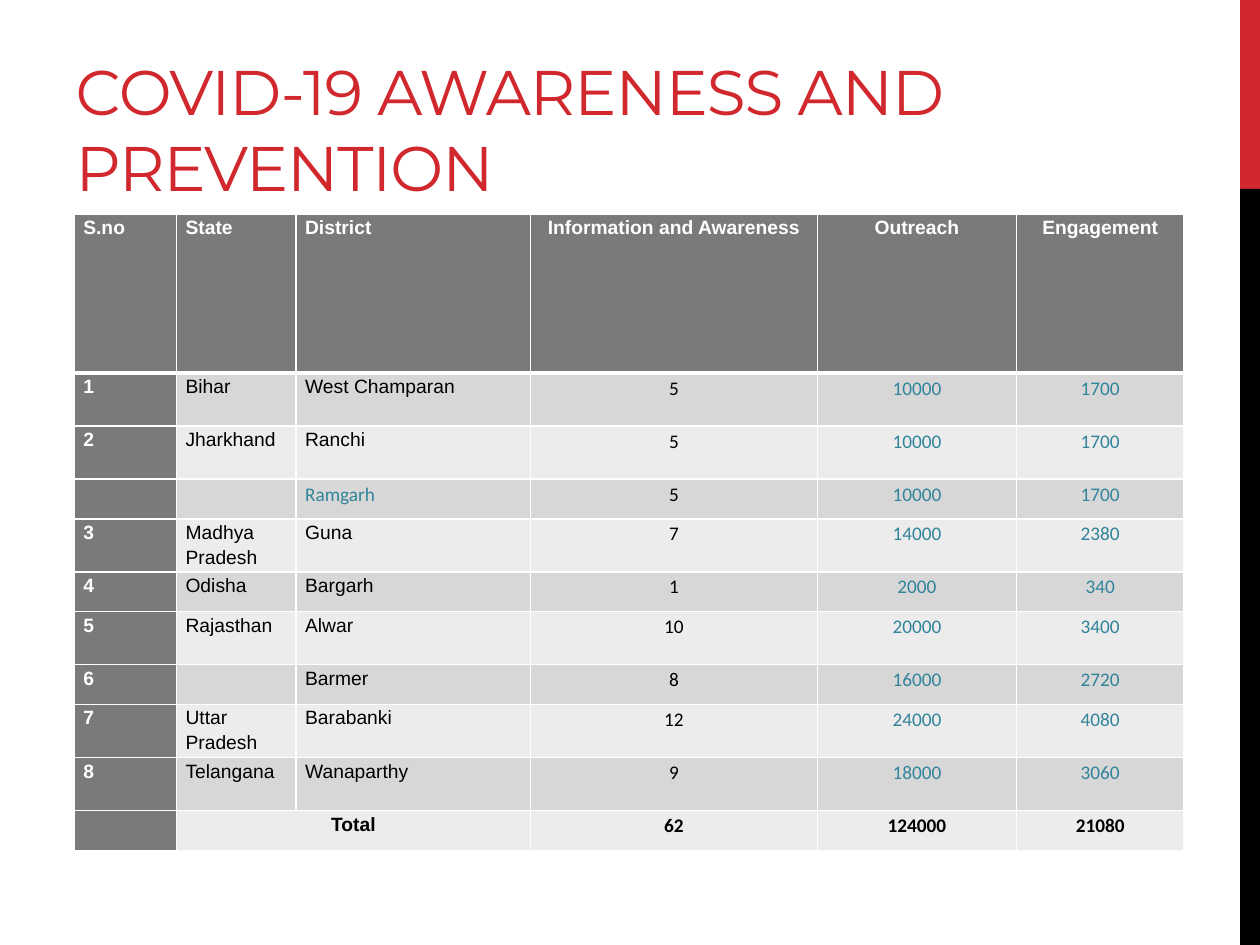
from dataclasses import dataclass, replace

from lxml.etree import SubElement
from pptx import Presentation
from pptx.dml.color import RGBColor
from pptx.enum.shapes import MSO_SHAPE
from pptx.enum.text import MSO_ANCHOR, MSO_AUTO_SIZE, PP_ALIGN
from pptx.oxml.ns import qn
from pptx.util import Cm, Pt

RED, BLACK, WHITE, TEAL = "D1282E", "000000", "FFFFFF", "31849B"
GREY, BAND_DARK, BAND_LIGHT = "7A7A7A", "D7D7D7", "ECECEC"


@dataclass(frozen=True)
class CellStyle:
    font: str
    color: str
    bold: bool = False
    centered: bool = False


@dataclass(frozen=True)
class Bar:
    top: float
    height: float
    color: str


HEADER = CellStyle("Arial", WHITE, bold=True)
PLACE = CellStyle("Arial", BLACK)
COUNT = CellStyle("Calibri", BLACK, centered=True)
REACH = CellStyle("Calibri", TEAL, centered=True)
COLUMN_STYLES = [HEADER, PLACE, PLACE, COUNT, REACH, REACH]
FIRST_CENTERED = 3

BARS = [Bar(0, 3.81, RED), Bar(3.81, 15.24, BLACK)]
COLUMN_WIDTHS = [2.06, 2.41, 4.72, 5.79, 4.01, 3.38]
HEADER_HEIGHT, TALL, SHORT = 3.2, 1.07, 0.8
ROW_HEIGHTS = [HEADER_HEIGHT, TALL, TALL, SHORT, TALL, SHORT,
               TALL, SHORT, TALL, TALL, SHORT]
ROWS = [
    ["S.no", "State", "District", "Information and Awareness", "Outreach", "Engagement"],
    ["1", "Bihar", "West Champaran", "5", "10000", "1700"],
    ["2", "Jharkhand", "Ranchi", "5", "10000", "1700"],
    ["", "", "Ramgarh", "5", "10000", "1700"],
    ["3", "Madhya Pradesh", "Guna", "7", "14000", "2380"],
    ["4", "Odisha", "Bargarh", "1", "2000", "340"],
    ["5", "Rajasthan", "Alwar", "10", "20000", "3400"],
    ["6", "", "Barmer", "8", "16000", "2720"],
    ["7", "Uttar Pradesh", "Barabanki", "12", "24000", "4080"],
    ["8", "Telangana", "Wanaparthy", "9", "18000", "3060"],
    ["", "Total", "", "62", "124000", "21080"],
]
TOTAL_ROW = len(ROWS) - 1


def rgb(color: str) -> RGBColor:
    return RGBColor.from_string(color)


def add_bar(slide, bar: Bar) -> None:
    sp = slide.shapes.add_shape(MSO_SHAPE.RECTANGLE, Cm(25), Cm(bar.top),
                                Cm(0.4), Cm(bar.height))
    sp.shadow.inherit = False
    sp.fill.solid()
    sp.fill.fore_color.rgb = rgb(bar.color)
    sp.line.fill.background()


def set_title(slide, text: str) -> None:
    sp = slide.shapes.title
    sp.left, sp.top, sp.width, sp.height = Cm(1.27), Cm(0.43), Cm(22.43), Cm(3.81)
    tf = sp.text_frame
    tf.text = text
    tf.word_wrap = True
    tf.auto_size = MSO_AUTO_SIZE.NONE
    tf.vertical_anchor = MSO_ANCHOR.BOTTOM
    p = tf.paragraphs[0]
    p.alignment = PP_ALIGN.LEFT
    r = p.runs[0]
    r.font.name, r.font.size = "Montserrat", Pt(36)
    r.font.color.rgb = rgb(RED)
    r._r.get_or_add_rPr().set("spc", "-60")


def style_for(row: int, col: int) -> CellStyle:
    if row == 0:
        return replace(HEADER, centered=col >= FIRST_CENTERED)
    if row == TOTAL_ROW and col > 0:
        return replace(COLUMN_STYLES[col], color=BLACK, bold=True, centered=True)
    if ROWS[row][col] == "Ramgarh":
        return replace(REACH, centered=False)
    return COLUMN_STYLES[col]


def fill_for(row: int, col: int) -> str:
    if row == 0 or col == 0:
        return GREY
    return BAND_DARK if row % 2 else BAND_LIGHT


def set_borders(cell, row: int) -> None:
    # Border lines come before the fill in the cell properties
    widths = {"lnL": 1, "lnR": 1, "lnT": 3 if row == 1 else 1, "lnB": 3 if row == 0 else 1}
    tc_pr = cell._tc.get_or_add_tcPr()
    for i, (side, width) in enumerate(widths.items()):
        ln = SubElement(tc_pr, qn(f"a:{side}"), w=str(Pt(width)))
        fill = SubElement(ln, qn("a:solidFill"))
        SubElement(fill, qn("a:srgbClr"), val=WHITE)
        tc_pr.insert(i, ln)


def fill_cell(cell, text: str, style: CellStyle, fill: str) -> None:
    cell.fill.solid()
    cell.fill.fore_color.rgb = rgb(fill)
    cell.margin_left = cell.margin_right = Cm(0.18)
    cell.margin_top = cell.margin_bottom = 0
    cell.vertical_anchor = MSO_ANCHOR.TOP
    p = cell.text_frame.paragraphs[0]
    p.alignment = PP_ALIGN.CENTER if style.centered else PP_ALIGN.LEFT
    p.line_spacing = 1.15
    if not text:
        # Keeps empty cells from stretching their row
        SubElement(p._p, qn("a:endParaRPr"), sz="1100")
        return
    p.text = text
    font = p.runs[0].font
    font.name, font.size, font.bold = style.font, Pt(11), style.bold
    font.color.rgb = rgb(style.color)


def add_district_table(slide) -> None:
    table = slide.shapes.add_table(
        len(ROWS), len(COLUMN_WIDTHS), Cm(1.5), Cm(4.32),
        Cm(sum(COLUMN_WIDTHS)), Cm(sum(ROW_HEIGHTS))).table
    for column, width in zip(table.columns, COLUMN_WIDTHS):
        column.width = Cm(width)
    for table_row, height in zip(table.rows, ROW_HEIGHTS):
        table_row.height = Cm(height)
    for row, texts in enumerate(ROWS):
        for col, text in enumerate(texts):
            cell = table.cell(row, col)
            fill_cell(cell, text, style_for(row, col), fill_for(row, col))
            set_borders(cell, row)
    table.cell(TOTAL_ROW, 1).merge(table.cell(TOTAL_ROW, 2))


def main() -> None:
    prs = Presentation()
    prs.slide_width, prs.slide_height = Cm(25.4), Cm(19.05)
    slide = prs.slides.add_slide(prs.slide_layouts[5])

    # Side bars
    for bar in BARS:
        add_bar(slide, bar)

    # Title and table
    set_title(slide, "COVID-19 AWARENESS AND PREVENTION")
    add_district_table(slide)
    prs.save("out.pptx")


if __name__ == "__main__":
    main()
